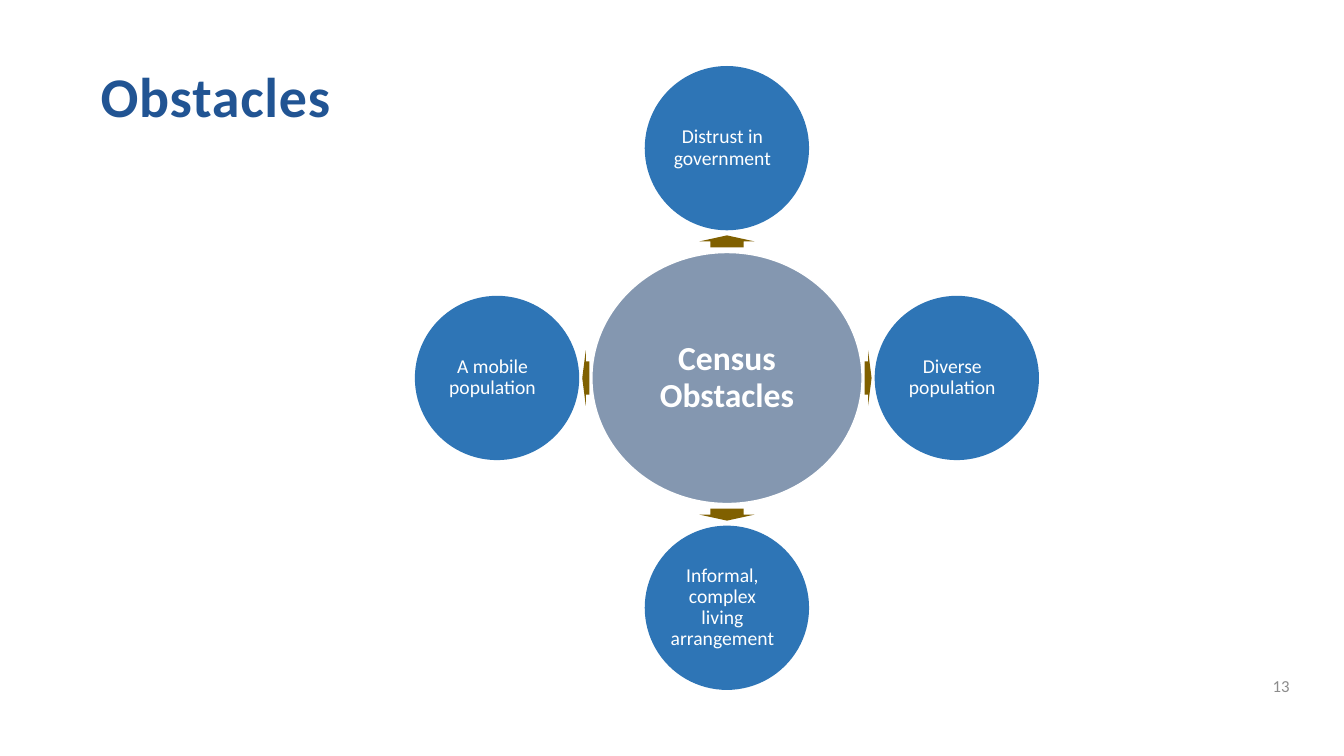
from pptx import Presentation
from pptx.dml.color import RGBColor
from pptx.enum.shapes import MSO_SHAPE
from pptx.enum.text import MSO_ANCHOR, PP_ALIGN
from pptx.util import Inches, Pt

TITLE = "Obstacles"
HUB = "Census Obstacles"
PAGE = "13"
SPOKES = [
    {"text": "Distrust in government", "dir": (0, -1), "turn": 270},
    {"text": "Diverse population", "dir": (1, 0), "turn": 0},
    {"text": "Informal, complex living arrangement", "dir": (0, 1), "turn": 90},
    {"text": "A mobile population", "dir": (-1, 0), "turn": 180},
]

THEME = {
    "font": "Calibri",
    "hub": "8497B0", "spoke": "2E75B6", "arrow": "806000", "white": "FFFFFF",
    "title": {"size": 40, "color": "215493", "bold": True},
    "hub_text": {"size": 24, "color": "FFFFFF", "bold": True},
    "spoke_text": {"size": 14, "color": "FFFFFF", "bold": False},
    "page": {"size": 12, "color": "8C8C8C", "bold": False},
}

CX, CY = 7.21, 3.75
HUB_W, HUB_H = 2.68, 2.49
SPOKE_D, ORBIT = 1.63, 2.28
ARROW_H = 0.55
ARROW_X = {"offset": 1.4, "length": 0.07}
ARROW_Y = {"offset": 1.355, "length": 0.12}
HUB_INSETS = (0.03, 0.03, 0.03, 0.03)
SPOKE_INSETS = (0.01, 0.02, 0.1, 0.02)
BOX_INSETS = (0.1, 0.05, 0.1, 0.05)


def write(sp, text, style, insets, align=PP_ALIGN.CENTER, anchor=MSO_ANCHOR.MIDDLE):
    tf = sp.text_frame
    sides = ("margin_left", "margin_top", "margin_right", "margin_bottom")
    values = dict(zip(sides, map(Inches, insets)))
    values.update(word_wrap=True, vertical_anchor=anchor)
    for name, value in values.items():
        setattr(tf, name, value)
    p = tf.paragraphs[0]
    p.alignment = align
    p.line_spacing = 0.9
    r = p.add_run()
    r.text = text
    fmt = {"name": THEME["font"], "size": Pt(style["size"]), "bold": style["bold"]}
    for name, value in fmt.items():
        setattr(r.font, name, value)
    r.font.color.rgb = RGBColor.from_string(style["color"])
    return r


def add_centred(s, kind, x, y, w, h, fill):
    sp = s.shapes.add_shape(kind, Inches(x - w / 2), Inches(y - h / 2), Inches(w), Inches(h))
    sp.shadow.inherit = False
    sp.fill.solid()
    sp.fill.fore_color.rgb = RGBColor.from_string(fill)
    sp.line.fill.background()
    return sp


def add_hub(s):
    sp = add_centred(s, MSO_SHAPE.OVAL, CX, CY, HUB_W, HUB_H, THEME["hub"])
    sp.line.color.rgb = RGBColor.from_string(THEME["white"])
    sp.line.width = Pt(1)
    write(sp, HUB, THEME["hub_text"], HUB_INSETS)


def add_spoke(s, spoke):
    dx, dy = spoke["dir"]
    arrow = ARROW_X if dx else ARROW_Y
    sp = add_centred(s, MSO_SHAPE.RIGHT_ARROW, CX + dx * arrow["offset"],
                     CY + dy * arrow["offset"], arrow["length"], ARROW_H, THEME["arrow"])
    sp.adjustments[0] = 0.6
    sp.adjustments[1] = 0.5
    sp.rotation = spoke["turn"]
    sp = add_centred(s, MSO_SHAPE.OVAL, CX + dx * ORBIT, CY + dy * ORBIT,
                     SPOKE_D, SPOKE_D, THEME["spoke"])
    write(sp, spoke["text"], THEME["spoke_text"], SPOKE_INSETS)


def main():
    prs = Presentation()
    prs.slide_width, prs.slide_height = Inches(13.33), Inches(7.5)
    s = prs.slides.add_slide(prs.slide_layouts[6])
    page = s.shapes.add_textbox(Inches(9.89), Inches(6.62), Inches(3), Inches(0.4))
    write(page, PAGE, THEME["page"], BOX_INSETS, PP_ALIGN.RIGHT)
    add_hub(s)
    for spoke in SPOKES:
        add_spoke(s, spoke)
    title = s.shapes.add_textbox(Inches(0.9), Inches(0.64), Inches(11.5), Inches(1.45))
    r = write(title, TITLE, THEME["title"], BOX_INSETS, PP_ALIGN.LEFT, MSO_ANCHOR.TOP)
    r.font._element.set("spc", "60")
    prs.save("out.pptx")


if __name__ == "__main__":
    main()
